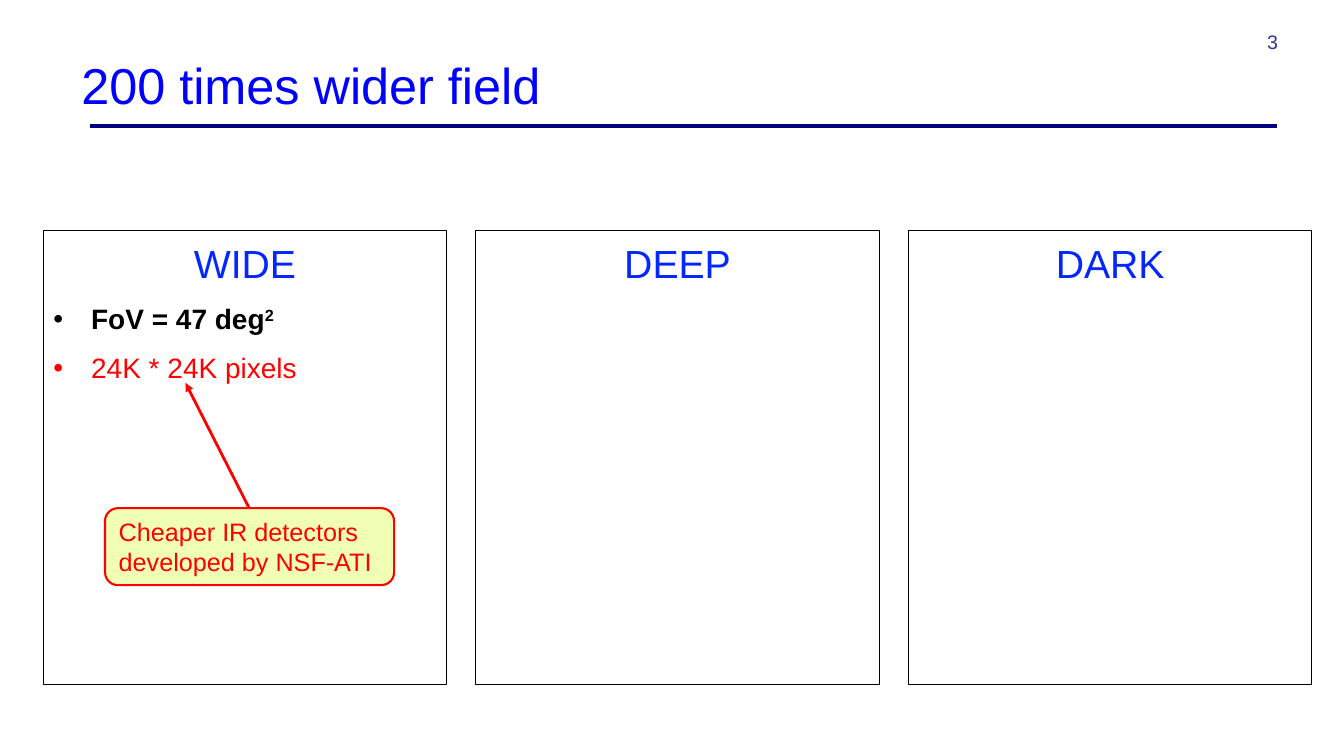
"""Build the slide comparing the wide, deep and dark survey panels."""
from dataclasses import dataclass

import lxml.etree
import pptx
import pptx.dml.color
import pptx.enum.shapes
import pptx.enum.text
import pptx.oxml.ns
import pptx.shapes.autoshape
import pptx.slide
import pptx.text.text
import pptx.util

Pt = pptx.util.Pt
qn = pptx.oxml.ns.qn
Align = pptx.enum.text.PP_ALIGN
Anchor = pptx.enum.text.MSO_ANCHOR
Preset = pptx.enum.shapes.MSO_SHAPE

COLORS = {
    "title": "0000FF",
    "rule": "000080",
    "heading": "0527FF",
    "ink": "000000",
    "accent": "FF0000",
    "callout": "F1FFB5",
    "number": "333399",
}
PANEL_LEFT, PANEL_TOP, PANEL_PITCH = 31, 165, 309
PANEL_WIDTH, PANEL_HEIGHT = 288, 324
BULLET_INDENT = 27


@dataclass(frozen=True)
class Line:
    text: str
    size: float
    color: str
    align: Align = Align.LEFT
    bold: bool = False
    bullet: bool = False
    superscript: str = ""
    space_before: float = 0


@dataclass(frozen=True)
class Box:
    left: float
    top: float
    width: float
    height: float
    lines: tuple[Line, ...]
    anchor: Anchor = Anchor.TOP
    preset: Preset | None = None
    outline: str = "ink"
    outline_width: float = 0.75
    fill: str | None = None
    inset_top: float = 3.6


@dataclass(frozen=True)
class Stroke:
    start: tuple[float, float]
    end: tuple[float, float]
    color: str
    width: float
    arrow: bool = False


def rgb(name: str) -> pptx.dml.color.RGBColor:
    return pptx.dml.color.RGBColor.from_string(COLORS[name])


def write_line(para: pptx.text.text._Paragraph, line: Line) -> None:
    if line.bullet:
        properties = para._p.get_or_add_pPr()
        properties.set("marL", str(Pt(BULLET_INDENT)))
        properties.set("indent", str(-Pt(BULLET_INDENT)))
        lxml.etree.SubElement(properties, qn("a:buFont"), typeface="Arial")
        lxml.etree.SubElement(properties, qn("a:buChar"), char="•")
    para.alignment = line.align
    para.space_before = Pt(line.space_before)
    para.font.name = "Arial"
    para.font.size = Pt(line.size)
    para.font.bold = line.bold
    para.font.color.rgb = rgb(line.color)
    para.add_run().text = line.text
    if line.superscript:
        span = para.add_run()
        span.text = line.superscript
        span._r.get_or_add_rPr().set("baseline", "30000")


def style_shape(shape: pptx.shapes.autoshape.Shape, box: Box) -> None:
    shape.shadow.inherit = False
    shape.line.color.rgb = rgb(box.outline)
    shape.line.width = Pt(box.outline_width)
    if box.fill:
        shape.fill.solid()
        shape.fill.fore_color.rgb = rgb(box.fill)
    else:
        shape.fill.background()


def draw_box(slide: pptx.slide.Slide, box: Box) -> None:
    place = [Pt(value) for value in (box.left, box.top, box.width, box.height)]
    if box.preset is None:
        shape = slide.shapes.add_textbox(*place)
    else:
        shape = slide.shapes.add_shape(box.preset, *place)
        style_shape(shape, box)
    frame = shape.text_frame
    frame.word_wrap = True
    frame.vertical_anchor = box.anchor
    frame.margin_top = Pt(box.inset_top)
    for index, line in enumerate(box.lines):
        write_line(frame.add_paragraph() if index else frame.paragraphs[0], line)


def draw_stroke(slide: pptx.slide.Slide, stroke: Stroke) -> None:
    ends = [Pt(value) for value in (*stroke.start, *stroke.end)]
    connector = slide.shapes.add_connector(
        pptx.enum.shapes.MSO_CONNECTOR.STRAIGHT, *ends)
    connector.line.color.rgb = rgb(stroke.color)
    connector.line.width = Pt(stroke.width)
    if stroke.arrow:
        lxml.etree.SubElement(
            connector.line._get_or_add_ln(), qn("a:tailEnd"), type="triangle")
    lxml.etree.SubElement(connector._element.spPr, qn("a:effectLst"))


TITLE = Box(51, 30, 872, 60, (Line("200 times wider field", 36, "title"),),
            anchor=Anchor.MIDDLE)
NUMBER = Box(720, 18, 200, 30, (Line("3", 14, "number", Align.RIGHT),))
CALLOUT = Box(
    75, 363, 206.5, 55,
    (Line("Cheaper IR detectors developed by NSF-ATI", 18, "accent"),),
    anchor=Anchor.MIDDLE, preset=Preset.ROUNDED_RECTANGLE,
    outline="accent", outline_width=1.5, fill="callout")
TITLE_RULE = Stroke((64, 90), (912, 90), "rule", 2.5)
CALLOUT_ARROW = Stroke((178, 363), (132.5, 273.5), "accent", 2, arrow=True)
PANELS = {
    "WIDE": (
        Line("FoV = 47 deg", 20, "ink", bold=True, bullet=True,
             superscript="2", space_before=11),
        Line("24K * 24K pixels", 20, "accent", bullet=True, space_before=11),
    ),
    "DEEP": (),
    "DARK": (),
}


def main() -> None:
    deck = pptx.Presentation()
    deck.slide_width, deck.slide_height = Pt(960), Pt(540)
    slide = deck.slides.add_slide(deck.slide_layouts[6])
    draw_stroke(slide, TITLE_RULE)
    draw_box(slide, TITLE)
    for column, (heading, details) in enumerate(PANELS.items()):
        lines = (Line(heading, 28, "heading", Align.CENTER), *details)
        draw_box(slide, Box(
            PANEL_LEFT + column * PANEL_PITCH, PANEL_TOP, PANEL_WIDTH,
            PANEL_HEIGHT, lines, preset=Preset.RECTANGLE, inset_top=6))
    draw_box(slide, CALLOUT)
    draw_stroke(slide, CALLOUT_ARROW)
    draw_box(slide, NUMBER)
    deck.save("out.pptx")


if __name__ == "__main__":
    main()
